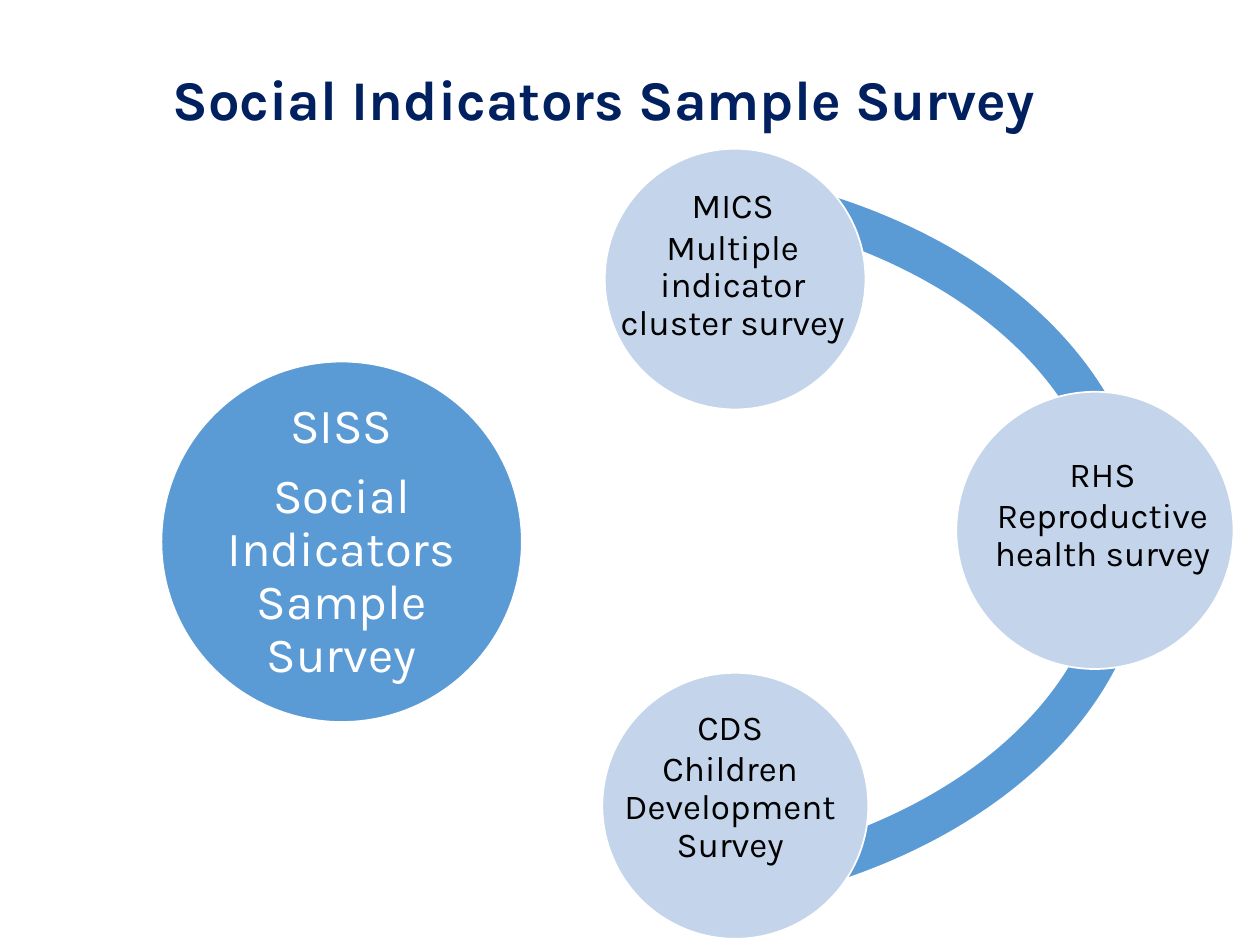
from pptx import Presentation
from pptx.dml.color import RGBColor
from pptx.enum import shapes, text
from pptx.util import Pt

FONT = "Karla"
BLUE, PALE, WHITE = "5B9BD5", "C4D5EB", "FFFFFF"


def add_figure(kind, box, fill):
    """Add a filled preset shape with a thin white outline."""
    sp = slide.shapes.add_shape(kind, *map(Pt, box))
    sp.shadow.inherit = False
    sp.fill.solid()
    sp.fill.fore_color.rgb = RGBColor.from_string(fill)
    sp.line.color.rgb = RGBColor.from_string(WHITE)
    sp.line.width = Pt(1)
    return sp


def set_text(sp, lines, size, color, align, after=0, bold=False):
    tf = sp.text_frame
    tf.text = "\n".join(lines)
    tf.word_wrap = True
    tf.auto_size = text.MSO_AUTO_SIZE.NONE
    tf.vertical_anchor = text.MSO_ANCHOR.MIDDLE
    for p in tf.paragraphs:
        p.alignment = align
        p.line_spacing = 0.9
        p.space_before = Pt(0)
        p.space_after = Pt(after)
        for r in p.runs:
            r.font.name = FONT
            r.font.size = Pt(size)
            r.font.bold = bold
            r.font.color.rgb = RGBColor.from_string(color)


prs = Presentation()
prs.slide_width, prs.slide_height = Pt(720), Pt(540)
slide = prs.slides.add_slide(prs.slide_layouts[5])

title = slide.shapes.title
title.left, title.top, title.width, title.height = map(Pt, (91.4, 28.8, 617.8, 59))
set_text(title, ["Social Indicators Sample Survey"], 32, "002060",
         text.PP_ALIGN.LEFT, bold=True)

arc = add_figure(shapes.MSO_SHAPE.BLOCK_ARC, (39.6, 92.2, 617, 432), BLUE)
for i, value in enumerate((175.28, 41.19, 0.06 - 0.002)):
    arc.adjustments[i] = value

# Circle left, top, diameter; label box; inset; fill; text colour, size, space after
main_style = (3, BLUE, WHITE, 28, 9.8)
survey_style = (2.2, PALE, "000000", 20, 2)
surveys = [
    ((92.2, 206.6, 206), (122.4, 236.9, 145.4, 145.4), main_style,
     ["SISS", "Social Indicators Sample Survey"]),
    ((345.6, 85, 149), (344.9, 98.6, 147.6, 106.6), survey_style,
     ["MICS", "Multiple indicator cluster survey"]),
    ((546.5, 223.9, 158.4), (555.1, 241.2, 149.8, 106.6), survey_style,
     ["RHS", "Reproductive health survey"]),
    ((344.2, 384.5, 152), (337.7, 396.7, 159.1, 106.6), survey_style,
     ["CDS", "Children Development Survey"]),
]
for (left, top, diameter), label_box, style, lines in surveys:
    inset, fill, color, size, after = style
    add_figure(shapes.MSO_SHAPE.OVAL, (left, top, diameter, diameter), fill)
    label = slide.shapes.add_textbox(*map(Pt, label_box))
    tf = label.text_frame
    tf.margin_left = tf.margin_right = tf.margin_top = tf.margin_bottom = Pt(inset)
    set_text(label, lines, size, color, text.PP_ALIGN.CENTER, after)

prs.save("out.pptx")
